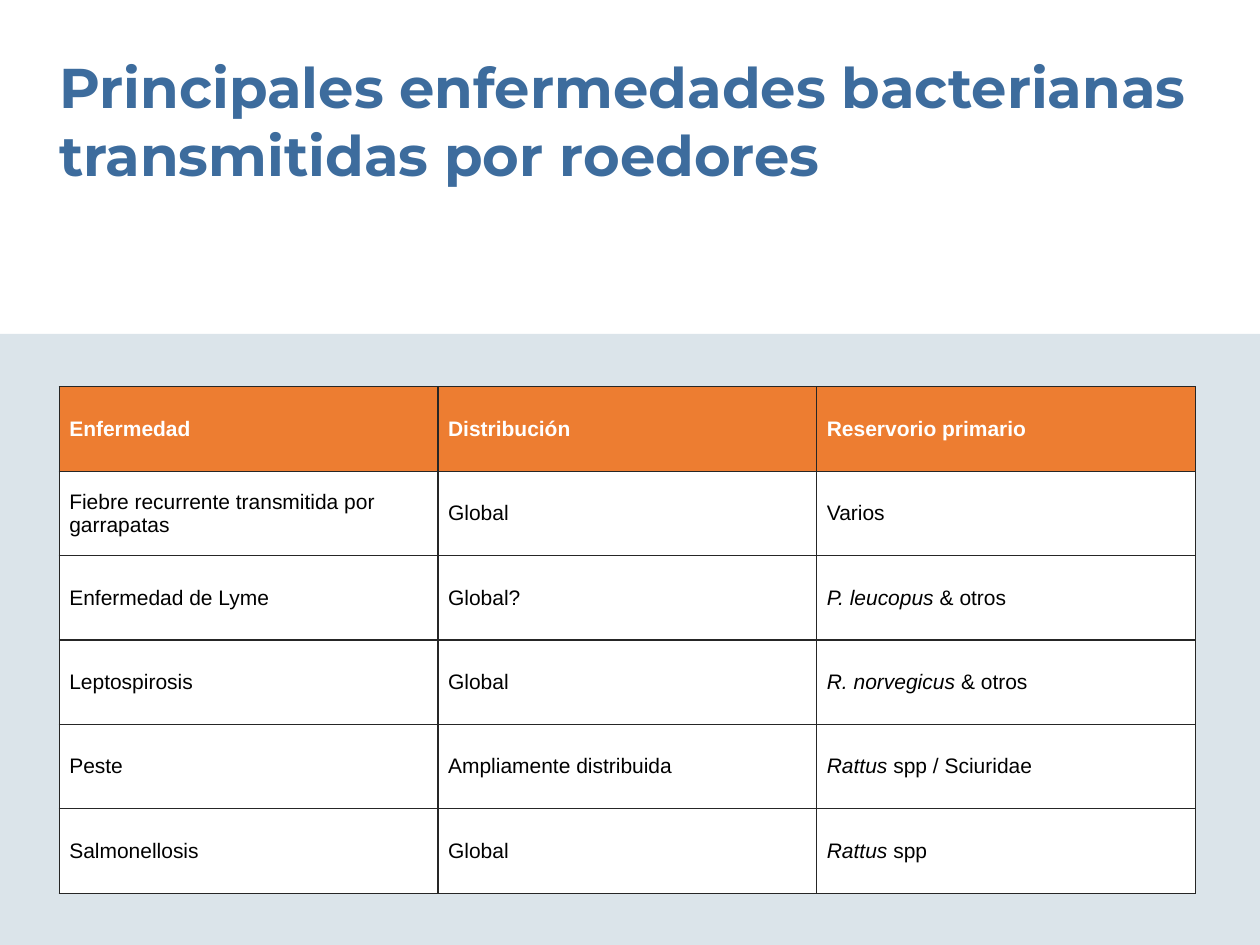
from dataclasses import dataclass

from lxml.etree import SubElement
from pptx import Presentation
from pptx.dml.color import RGBColor as RGB
from pptx.enum.shapes import MSO_SHAPE as Shape
from pptx.enum.text import MSO_ANCHOR as Anchor, MSO_AUTO_SIZE as Fit, PP_ALIGN as Align
from pptx.oxml.ns import qn
from pptx.util import Inches, Pt


@dataclass(frozen=True)
class Theme:
    title: str = "3D6C9D"
    band: str = "DBE4EA"
    head: str = "ED7D31"
    white: str = "FFFFFF"
    black: str = "000000"
    rule: str = "262626"
    title_font: str = "Montserrat"
    body_font: str = "Arial"
    title_size: int = 32
    body_size: int = 12
    rule_width: float = 0.75


theme = Theme()


def style(font, name, size, color, bold):
    font.name, font.size, font.bold = name, Pt(size), bold
    font.color.rgb = RGB.from_string(color)


def border(cell):
    props = cell._tc.get_or_add_tcPr()
    for side in ("lnL", "lnR", "lnT", "lnB"):
        line = SubElement(props, qn(f"a:{side}"), w=str(Pt(theme.rule_width)))
        fill = SubElement(line, qn("a:solidFill"))
        SubElement(fill, qn("a:srgbClr"), val=theme.rule)


deck = Presentation()
deck.slide_width, deck.slide_height = Inches(10), Inches(7.5)
slide = deck.slides.add_slide(deck.slide_layouts[5])
left, width = Inches(0.47), Inches(9.02)

# Title
title = slide.shapes.title
title.left, title.top, title.width, title.height = left, Inches(0.42), width, Inches(1.62)
frame = title.text_frame
frame.text = "Principales enfermedades bacterianas transmitidas por roedores"
frame.margin_left = frame.margin_right = frame.margin_top = frame.margin_bottom = 0
frame.vertical_anchor = Anchor.TOP
frame.word_wrap = True
frame.auto_size = Fit.SHAPE_TO_FIT_TEXT
para = frame.paragraphs[0]
para.alignment = Align.LEFT
style(para.font, theme.title_font, theme.title_size, theme.title, True)

# Lower band
band = slide.shapes.add_shape(Shape.RECTANGLE, 0, Inches(2.65), Inches(10), Inches(4.85))
band.shadow.inherit = False
band.fill.solid()
band.fill.fore_color.rgb = RGB.from_string(theme.band)
band.line.fill.background()

# Table text: a pair holds an italic species name and the plain rest
rows = [
    ("Enfermedad", "Distribución", "Reservorio primario"),
    ("Fiebre recurrente transmitida por garrapatas", "Global", "Varios"),
    ("Enfermedad de Lyme", "Global?", ("P. leucopus", " & otros")),
    ("Leptospirosis", "Global", ("R. norvegicus", " & otros")),
    ("Peste", "Ampliamente distribuida", ("Rattus", " spp / Sciuridae")),
    ("Salmonellosis", "Global", ("Rattus", " spp")),
]

# Table
grid = slide.shapes.add_table(len(rows), 3, left, Inches(3.07), width, Inches(4.02)).table
for r, row in enumerate(rows):
    head = r == 0
    for c, text in enumerate(row):
        cell = grid.cell(r, c)
        border(cell)
        cell.fill.solid()
        cell.fill.fore_color.rgb = RGB.from_string(theme.head if head else theme.white)
        cell.vertical_anchor = Anchor.MIDDLE
        cell.margin_left = cell.margin_right = Inches(0.08)
        cell.margin_top = cell.margin_bottom = Inches(0.05)
        para = cell.text_frame.paragraphs[0]
        style(para.font, theme.body_font, theme.body_size,
              theme.white if head else theme.black, head)
        if isinstance(text, tuple):
            name, rest = text
            run = para.add_run()
            run.text, run.font.italic = name, True
            para.add_run().text = rest
        else:
            para.add_run().text = text

deck.save("out.pptx")
